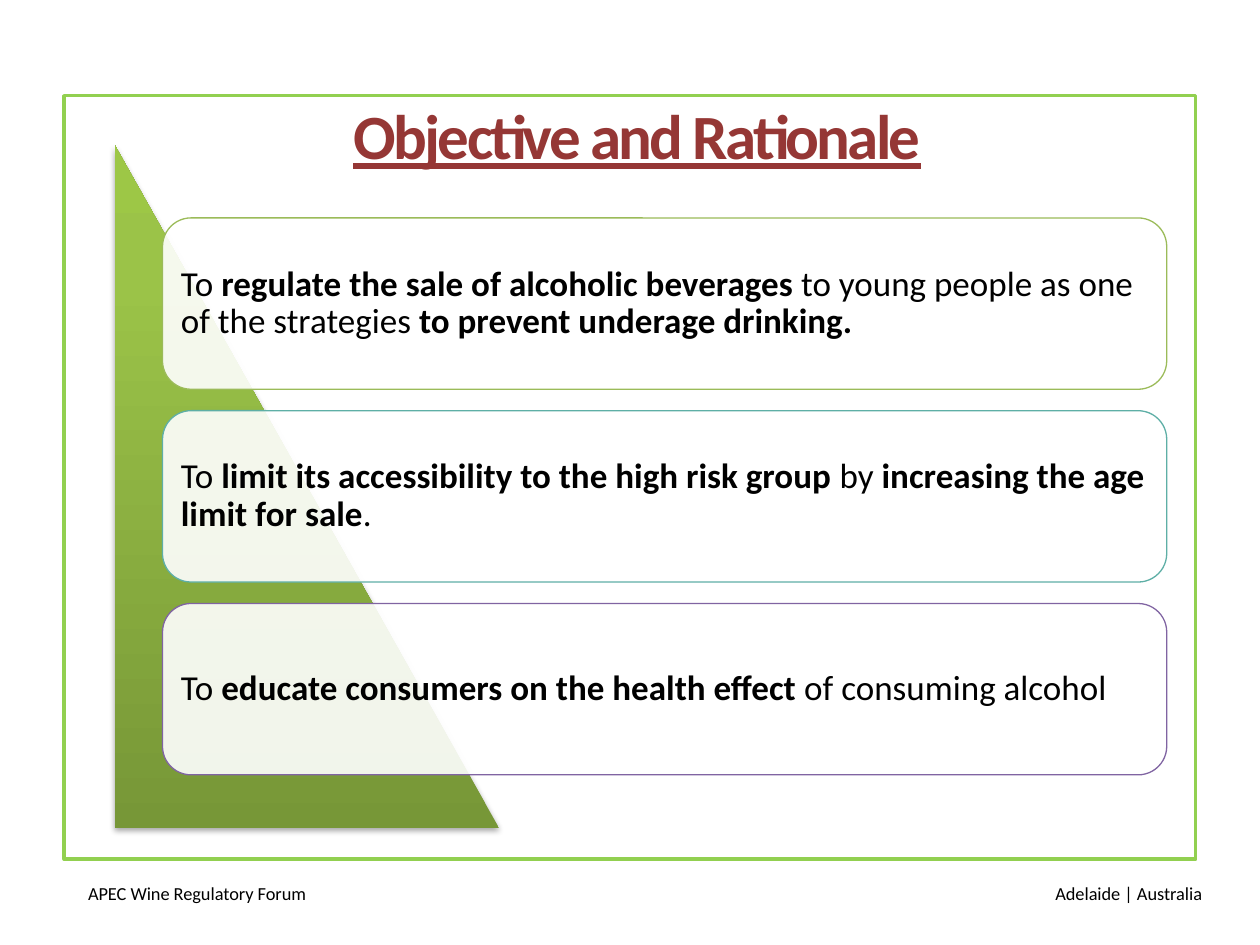
from copy import deepcopy
from dataclasses import dataclass

from lxml import etree
from pptx import Presentation
from pptx.dml.color import RGBColor
from pptx.enum.shapes import MSO_SHAPE
from pptx.enum.text import MSO_ANCHOR, MSO_AUTO_SIZE, PP_ALIGN
from pptx.oxml.ns import qn
from pptx.util import Emu, Inches, Pt

RECTANGLE = MSO_SHAPE.RECTANGLE
ROUNDED = MSO_SHAPE.ROUNDED_RECTANGLE
TRIANGLE = MSO_SHAPE.RIGHT_TRIANGLE
TOP, MIDDLE = MSO_ANCHOR.TOP, MSO_ANCHOR.MIDDLE
LEFT, CENTER, RIGHT = PP_ALIGN.LEFT, PP_ALIGN.CENTER, PP_ALIGN.RIGHT
FIXED_SIZE = MSO_AUTO_SIZE.NONE
TITLE_ONLY = 5
COLUMNS, ROWS = 100, 75


@dataclass(frozen=True)
class Theme:
    font: str = "Calibri"
    title_size: float = 36
    body_size: float = 20
    footer_size: float = 10.5
    ink: str = "000000"
    title: str = "953735"
    frame: str = "92D050"
    card: str = "FFFFFF"
    card_lines: tuple = ("9BBB59", "5EAFA6", "8064A2")
    gradient: tuple = ((0, "779737"), (0.8, "9BC348"), (1, "9DC746"))


def write_text(frame, runs, size, font, color, align=LEFT, anchor=TOP, inset=None, line_spacing=None):
    frame.word_wrap = True
    frame.auto_size = FIXED_SIZE
    frame.vertical_anchor = anchor
    if inset is not None:
        frame.margin_left = frame.margin_right = Inches(inset)
        frame.margin_top = frame.margin_bottom = Inches(inset)
    paragraph = frame.paragraphs[0]
    paragraph.alignment = align
    if line_spacing:
        paragraph.line_spacing = line_spacing
    for text, bold in runs:
        run = paragraph.add_run()
        run.text = text
        run.font.name = font
        run.font.size = Pt(size)
        run.font.bold = bold
        run.font.color.rgb = RGBColor.from_string(color)
    return paragraph.runs


class SlideBuilder:
    def __init__(self, presentation, theme):
        self.theme = theme
        self.slide = presentation.slides.add_slide(presentation.slide_layouts[TITLE_ONLY])
        self.column = presentation.slide_width / COLUMNS
        self.row = presentation.slide_height / ROWS

    def place(self, left, top, width, height):
        return (
            Emu(round(left * self.column)),
            Emu(round(top * self.row)),
            Emu(round(width * self.column)),
            Emu(round(height * self.row)),
        )

    def shape(self, kind, area, line=None, width=0.75):
        shape = self.slide.shapes.add_shape(kind, *self.place(*area))
        shape.shadow.inherit = False
        shape.fill.background()
        if line:
            shape.line.color.rgb = RGBColor.from_string(line)
            shape.line.width = Pt(width)
        else:
            shape.line.fill.background()
        return shape

    def title(self, text, area):
        title = self.slide.shapes.title
        title.left, title.top, title.width, title.height = self.place(*area)
        space, words = write_text(
            title.text_frame, [(" ", True), (text, True)], self.theme.title_size,
            self.theme.font, self.theme.ink, align=CENTER, anchor=MIDDLE,
        )
        words.font.color.rgb = RGBColor.from_string(self.theme.title)
        words.font.underline = True
        words.font._element.set("spc", "-150")

    def footer(self, text, area, align):
        box = self.slide.shapes.add_textbox(*self.place(*area))
        write_text(box.text_frame, [(text, False)], self.theme.footer_size,
                   self.theme.font, self.theme.ink, align=align)

    def frame(self, area):
        self.shape(RECTANGLE, area, line=self.theme.frame, width=2)

    def triangle(self, area):
        triangle = self.shape(TRIANGLE, area)
        triangle.fill.gradient()
        triangle.fill.gradient_angle = 90
        stops = triangle._element.spPr.find(".//" + qn("a:gsLst"))
        stops.append(deepcopy(stops[-1]))
        for stop, (position, color) in zip(triangle.fill.gradient_stops, self.theme.gradient):
            stop.position = position
            stop.color.rgb = RGBColor.from_string(color)
        effects = triangle._element.spPr.find(qn("a:effectLst"))
        shadow = etree.SubElement(
            effects, qn("a:outerShdw"), blurRad=str(Pt(3.1)), dist=str(Pt(1.8)),
            dir="5400000", rotWithShape="0",
        )
        color = etree.SubElement(shadow, qn("a:srgbClr"), val=self.theme.ink)
        etree.SubElement(color, qn("a:alpha"), val="35000")

    def card(self, runs, area, line):
        card = self.shape(ROUNDED, area, line=line)
        card.fill.solid()
        card.fill.fore_color.rgb = RGBColor.from_string(self.theme.card)
        color = card._element.spPr.find(qn("a:solidFill"))[0]
        etree.SubElement(color, qn("a:alpha"), val="90000")
        write_text(card.text_frame, runs, self.theme.body_size, self.theme.font,
                   self.theme.ink, anchor=MIDDLE, inset=0.08, line_spacing=0.9)


OBJECTIVES = (
    (
        ("To ", False),
        ("regulate the sale of alcoholic beverages ", True),
        ("to young people as one of the strategies ", False),
        ("to prevent underage drinking.", True),
    ),
    (
        ("To ", False),
        ("limit its accessibility to the high risk group ", True),
        ("by ", False),
        ("increasing the age limit for sale", True),
        (".", False),
    ),
    (
        ("To ", False),
        ("educate consumers on the health effect ", True),
        ("of consuming alcohol", False),
    ),
)


def main():
    presentation = Presentation()
    presentation.slide_width, presentation.slide_height = Inches(10), Inches(7.5)
    theme = Theme()
    builder = SlideBuilder(presentation, theme)
    builder.footer("APEC Wine Regulatory Forum", (6, 69.5, 23.5, 4), LEFT)
    builder.frame((5.1, 7.6, 89.8, 60.6))
    builder.footer("Adelaide | Australia", (72.9, 69.5, 23.5, 4), RIGHT)
    builder.title("Objective and Rationale", (5, 7.4, 90, 6.5))
    builder.triangle((9.1, 11.5, 30.5, 54.2))
    first_row, pitch = 17.3, 15.3
    for index, (runs, line) in enumerate(zip(OBJECTIVES, theme.card_lines)):
        builder.card(runs, (12.9, first_row + index * pitch, 79.7, 13.6), line)
    presentation.save("out.pptx")


if __name__ == "__main__":
    main()
